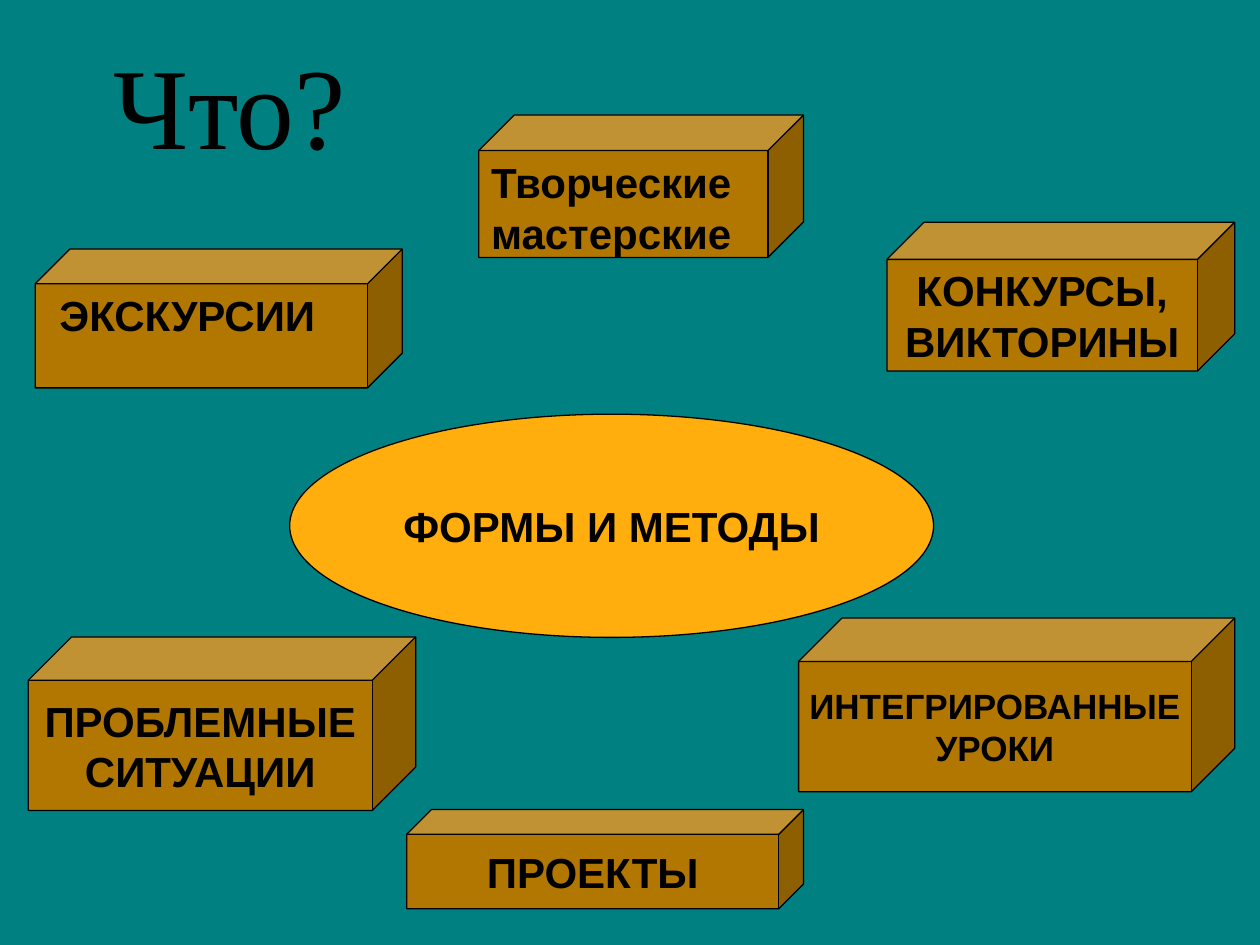
from pptx import Presentation
from pptx.dml.color import RGBColor
from pptx.enum.shapes import MSO_SHAPE as Preset
from pptx.enum.text import MSO_ANCHOR as Anchor, PP_ALIGN as Align
from pptx.util import Cm, Pt

TEAL = RGBColor(0x00, 0x80, 0x80)
ORANGE = RGBColor(0xFF, 0xAE, 0x0D)
BROWN = RGBColor(0xB2, 0x77, 0x00)
BLACK = RGBColor(0x00, 0x00, 0x00)

# Content: lines of text, then left, top, width, height in cm
TITLE = (["Что?"], (2.03, 0.33, 21.79, 3.25))
CENTRE = (["ФОРМЫ И МЕТОДЫ"], (5.84, 8.35, 12.98, 4.5))
LEFT_CUBES = [
    (["ЭКСКУРСИИ"], (0.71, 5.02, 7.4, 2.8), 0.24),  # last value: text indent
    (["Творческие мастерские"], (9.65, 2.32, 6.55, 2.87), 0),
]
CENTRED_CUBES = [
    (["КОНКУРСЫ,", "ВИКТОРИНЫ"], (17.88, 4.48, 7.01, 3), 24),  # last value: text size
    (["ПРОБЛЕМНЫЕ", "СИТУАЦИИ"], (0.57, 12.84, 7.81, 3.5), 24),
    (["ПРОЕКТЫ"], (8.2, 16.32, 8, 2), 24),
    (["ИНТЕГРИРОВАННЫЕ", "УРОКИ"], (16.1, 12.46, 8.79, 3.5), 20),
]


def write(shape, lines, align, anchor, wrap=True, indent=0, spacing=1.0, **font_values):
    frame = shape.text_frame
    frame.word_wrap = wrap
    frame.vertical_anchor = anchor
    frame.text = "\n".join(lines)
    font_format = {"name": "Arial", "size": Pt(24), "bold": True, **font_values}
    for paragraph in frame.paragraphs:
        paragraph.alignment = align
        paragraph.line_spacing = spacing
        if indent:
            paragraph._p.get_or_add_pPr().set("marL", str(Cm(indent)))
        for name, value in font_format.items():
            setattr(paragraph.font, name, value)
        paragraph.font.color.rgb = BLACK


def add_figure(slide, preset, box, color):
    shape = slide.shapes.add_shape(preset, *map(Cm, box))
    shape.shadow.inherit = False
    shape.fill.solid()
    shape.fill.fore_color.rgb = color
    shape.line.color.rgb = BLACK
    shape.line.width = Pt(0.75)
    return shape


def main():
    presentation = Presentation()
    presentation.slide_width, presentation.slide_height = Cm(25.4), Cm(19.05)
    slide = presentation.slides.add_slide(presentation.slide_layouts[6])
    slide.background.fill.solid()
    slide.background.fill.fore_color.rgb = TEAL

    # Title
    lines, box = TITLE
    title = slide.shapes.add_textbox(*map(Cm, box))
    write(title, lines, Align.LEFT, Anchor.BOTTOM, spacing=0.8,
          name="Times New Roman", size=Pt(66), bold=False)

    # Central topic
    lines, box = CENTRE
    write(add_figure(slide, Preset.OVAL, box, ORANGE), lines, Align.CENTER, Anchor.MIDDLE)

    # Cubes around it
    for lines, box, indent in LEFT_CUBES:
        cube = add_figure(slide, Preset.CUBE, box, BROWN)
        write(cube, lines, Align.LEFT, Anchor.TOP, indent=indent)
    for lines, box, size in CENTRED_CUBES:
        cube = add_figure(slide, Preset.CUBE, box, BROWN)
        write(cube, lines, Align.CENTER, Anchor.MIDDLE, wrap=False, size=Pt(size))

    presentation.save("out.pptx")


if __name__ == "__main__":
    main()
